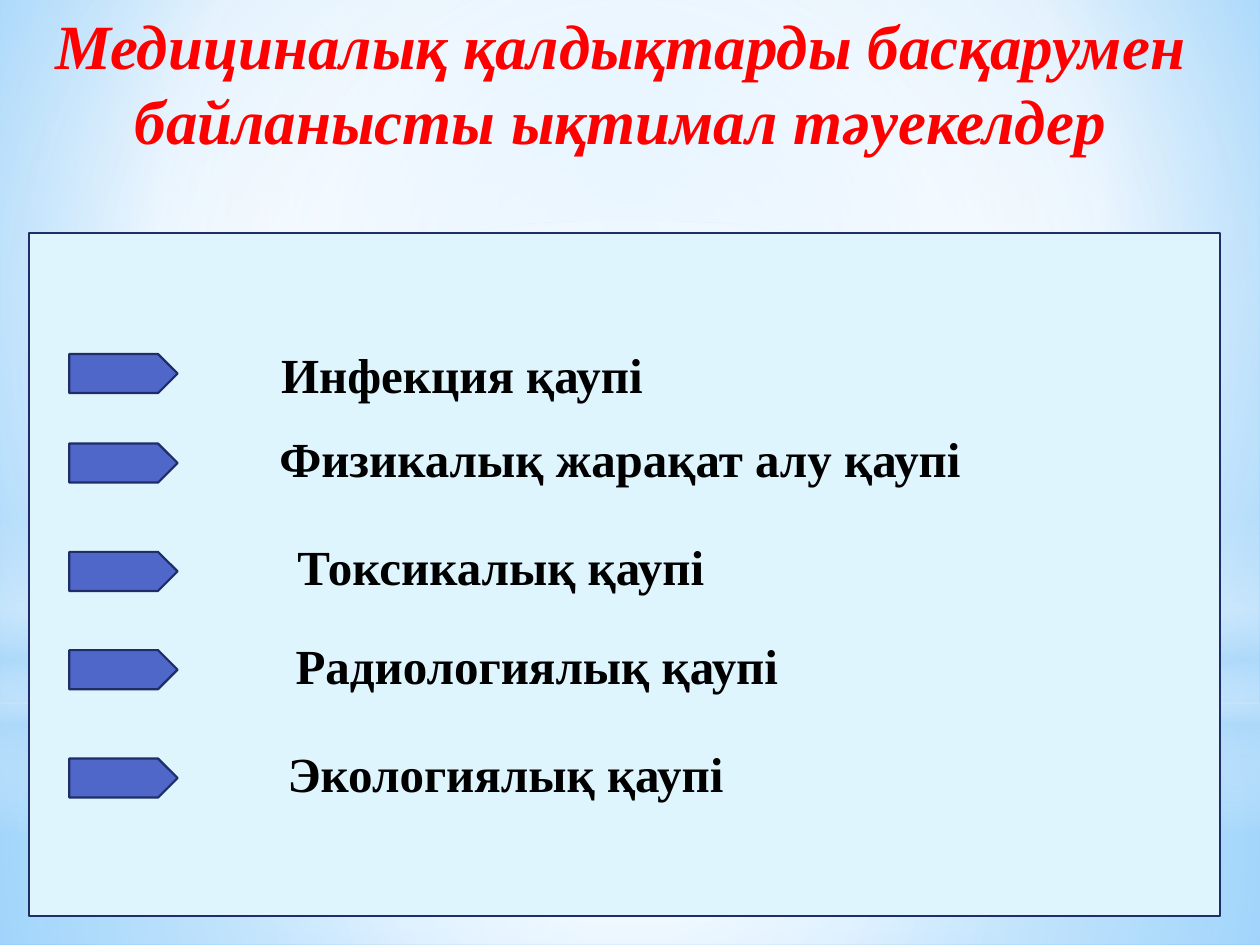
"""Build a slide listing the risks of medical waste management."""
from lxml.etree import SubElement
from pptx import Presentation
from pptx.dml.color import RGBColor
from pptx.enum.shapes import MSO_SHAPE as SHAPE
from pptx.enum.text import MSO_ANCHOR, MSO_AUTO_SIZE, PP_ALIGN
from pptx.oxml.ns import qn
from pptx.util import Inches, Pt

RED = RGBColor(0xFF, 0x00, 0x00)
BLACK = RGBColor(0x00, 0x00, 0x00)
NAVY = RGBColor(0x1F, 0x2E, 0x69)
BLUE = RGBColor(0x4E, 0x67, 0xC8)
PALE = RGBColor(0xDF, 0xF5, 0xFD)
WHITE = RGBColor(0xFF, 0xFF, 0xFF)
SKY = RGBColor(0xB4, 0xDC, 0xFA)
BACK_CENTRE = RGBColor(0x9E, 0xD5, 0xFF)
BACK_EDGE = RGBColor(0x5B, 0xB9, 0xFF)
FONT = "Times New Roman"
CENTRE = (50, 50, 50, 50)


def set_gradient(properties, stops, focus):
    """Swap an empty fill for a circular gradient, or a vertical one without focus."""
    gradient = properties.makeelement(qn("a:gradFill"), {"rotWithShape": "1"})
    stop_list = SubElement(gradient, qn("a:gsLst"))
    for position, color, opacity in stops:
        stop = SubElement(stop_list, qn("a:gs"), pos=str(position * 1000))
        tint = SubElement(stop, qn("a:srgbClr"), val=str(color))
        if opacity < 100:
            SubElement(tint, qn("a:alpha"), val=str(opacity * 1000))
    if focus:
        circle = SubElement(gradient, qn("a:path"), path="circle")
        sides = {side: str(share * 1000) for side, share in zip("ltrb", focus)}
        SubElement(circle, qn("a:fillToRect"), sides)
    else:
        SubElement(gradient, qn("a:lin"), ang="5400000", scaled="0")
    properties.replace(properties.find(qn("a:noFill")), gradient)


def add_block(preset, left, top, width, height, color=None, outline=None):
    """Add a shape without shadow; a missing colour leaves it empty."""
    block = slide.shapes.add_shape(
        preset, Inches(left), Inches(top), Inches(width), Inches(height))
    block.shadow.inherit = False
    if color is None:
        block.fill.background()
    else:
        block.fill.solid()
        block.fill.fore_color.rgb = color
    if outline is None:
        block.line.fill.background()
    else:
        block.line.color.rgb = outline
        block.line.width = Pt(1.25)
    return block


prs = Presentation()
prs.slide_width = Inches(10)
prs.slide_height = Inches(7.5)
slide = prs.slides.add_slide(prs.slide_layouts[5])

slide.background.fill.background()
set_gradient(slide.element.xpath(".//p:bgPr")[0],
             [(0, BACK_CENTRE, 100), (60, WHITE, 100), (100, BACK_EDGE, 100)],
             (20, 10, 20, 60))

glows = [
    (SHAPE.RECTANGLE, 5.58, 1.92, CENTRE,
     [(0, WHITE, 91), (37, WHITE, 76), (100, SKY, 79)]),
    (SHAPE.RECTANGLE, 0, 5.58, CENTRE,
     [(0, WHITE, 89), (48, WHITE, 62), (100, SKY, 79)]),
    (SHAPE.RECTANGLE, 4.12, 2.5, None,
     [(0, WHITE, 0), (29, WHITE, 30), (45, SKY, 40),
      (55, WHITE, 26), (65, SKY, 60), (100, WHITE, 0)]),
    (SHAPE.OVAL, 1.75, 5.58, CENTRE, [(0, WHITE, 100), (56, WHITE, 0)]),
]
title = slide.shapes.title
for preset, top, height, focus, stops in glows:
    glow = add_block(preset, 0, top, 10, height)
    set_gradient(glow.element.spPr, stops, focus)
    title.element.addprevious(glow.element)

title.left, title.top = Inches(0.16), Inches(0)
title.width, title.height = Inches(9.53), Inches(1.85)
heading = title.text_frame
heading.text = "Медициналық қалдықтарды басқарумен байланысты ықтимал тәуекелдер"
heading.word_wrap = True
heading.auto_size = MSO_AUTO_SIZE.NONE
heading.vertical_anchor = MSO_ANCHOR.TOP
heading.paragraphs[0].alignment = PP_ALIGN.CENTER
heading_font = heading.paragraphs[0].runs[0].font
heading_font.name, heading_font.size = FONT, Pt(36)
heading_font.bold = heading_font.italic = True
heading_font.color.rgb = RED

add_block(SHAPE.RECTANGLE, 0.23, 1.85, 9.45, 5.42, PALE, NAVY)

risks = [
    ("Инфекция қаупі ", 2.81, 1.8, 2.73, 3.83, 0.47),
    ("Физикалық жарақат алу қаупі", 3.52, 1.64, 3.36, 6.56, 0.55),
    ("Токсикалық қаупі", 4.38, 1.46, 4.14, 5.03, 0.7),
    ("Радиологиялық қаупі", 5.16, 1.8, 5, 4.92, 0.55),
    ("Экологиялық қаупі ", 6.02, 1.64, 5.86, 4.84, 0.55),
]
for risk, arrow_top, left, top, width, height in risks:
    add_block(SHAPE.PENTAGON, 0.55, arrow_top, 0.86, 0.31, BLUE, NAVY)
    label = add_block(SHAPE.RECTANGLE, left, top, width, height, PALE).text_frame
    label.text = risk
    label.word_wrap = True
    label.vertical_anchor = MSO_ANCHOR.MIDDLE
    label.paragraphs[0].alignment = PP_ALIGN.CENTER
    risk_font = label.paragraphs[0].runs[0].font
    risk_font.name, risk_font.size, risk_font.bold = FONT, Pt(28), True
    risk_font.color.rgb = BLACK

prs.save("out.pptx")
